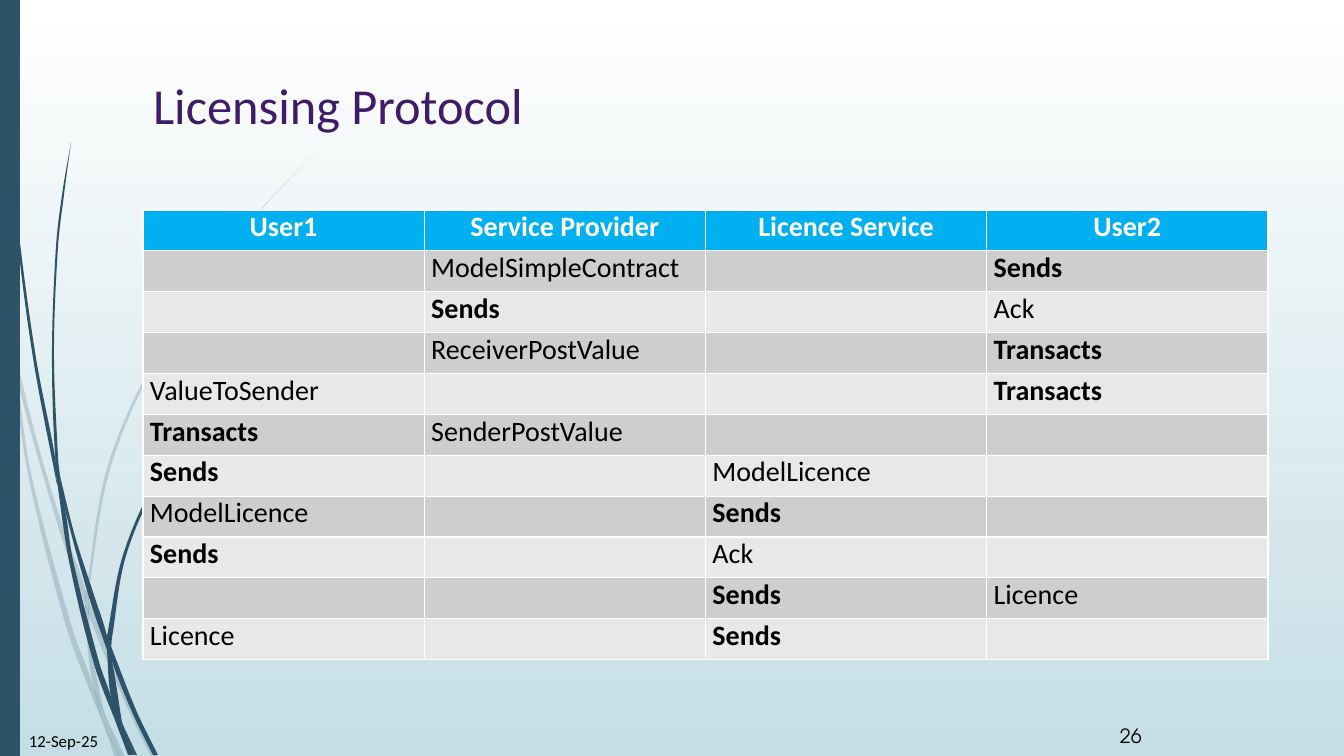
from math import dist

from lxml import etree
from pptx import Presentation
from pptx import util as u
from pptx.dml.color import RGBColor
from pptx.enum import shapes, text
from pptx.oxml import ns

COLORS = {
    "white": "FFFFFF", "mist": "C5DEE5", "slate": "2E5369", "violet": "3F1C6A",
    "header": "00B0F0", "dark_band": "CECECE", "light_band": "E8E8E8", "black": "000000",
}
HEADERS = ["User1", "Service Provider", "Licence Service", "User2"]
STEPS = [
    ["", "ModelSimpleContract", "", "Sends"],
    ["", "Sends", "", "Ack"],
    ["", "ReceiverPostValue", "", "Transacts"],
    ["ValueToSender", "", "", "Transacts"],
    ["Transacts", "SenderPostValue", "", ""],
    ["Sends", "", "ModelLicence", ""],
    ["ModelLicence", "", "Sends", ""],
    ["Sends", "", "Ack", ""],
    ["", "", "Sends", "Licence"],
    ["Licence", "", "Sends", ""],
]
ACTIONS = {"Sends", "Transacts"}
TITLE = ("Licensing Protocol", (143, 69, 1125, 141),
         {"name": "Calibri", "size": u.Pt(36), "color": "violet"})
FOOTERS = [
    ("12-Sep-25", (19, 726, 110, 40), text.MSO_ANCHOR.TOP,
     {"name": "Calibri", "size": u.Pt(12), "color": "black"}),
    ("26", (1110, 719, 61, 34), text.MSO_ANCHOR.MIDDLE,
     {"name": "TeX Gyre Adventor", "size": u.Pt(14), "color": "black"}),
]
TABLE_BOX = (143, 210, 1125, 450)
BAR_BOX = (0, 0, 20, 756)

PALE_BLADES = [
    ([(0, 284), (9, 325), (11, 353)], [(0, 301), (10, 347), (11, 353)]),
    ([(14, 348), (17, 379), (58, 526), (85, 604)],
     [(14, 348), (36, 437), (62, 524), (86, 591), (85, 604)]),
    ([(89, 601), (89, 615), (124, 700), (151, 757)],
     [(89, 601), (93, 612), (128, 698), (156, 757)]),
    ([(106, 717), (120, 757)], [(106, 717), (125, 757)]),
    ([(11, 353), (28, 474), (66, 626), (93, 699), (102, 720)],
     [(11, 353), (17, 379), (31, 473), (71, 624), (94, 688), (102, 720)]),
    ([(85, 604), (88, 651), (94, 688), (106, 717)],
     [(85, 604), (89, 613), (92, 651), (104, 712), (106, 717)]),
    ([(86, 591), (108, 465), (159, 351), (230, 246), (270, 199), (314, 154)],
     [(86, 591), (89, 601), (89, 589), (111, 466), (161, 352), (231, 247),
      (270, 200), (314, 154)]),
    ([(102, 720), (115, 757)], [(102, 720), (120, 757)]),
    ([(86, 591), (85, 604), (89, 615)], [(86, 591), (89, 601), (89, 615)]),
    ([(94, 688), (102, 720), (120, 757)], [(94, 688), (106, 717), (120, 757)]),
]
DARK_BLADES = [
    ([(3, 0), (7, 111), (17, 235), (33, 358), (57, 485)],
     [(4, 0), (8, 110), (19, 234), (36, 358), (55, 457), (57, 485)]),
    ([(60, 476), (65, 509), (89, 597), (107, 650)],
     [(60, 476), (75, 536), (94, 595), (107, 636), (107, 650)]),
    ([(111, 646), (112, 661), (133, 714), (153, 755)],
     [(111, 646), (114, 654), (137, 712), (158, 755)]),
    ([(57, 481), (69, 561), (94, 664), (118, 728)],
     [(57, 481), (65, 509), (73, 560), (99, 662), (111, 697), (118, 728)]),
    ([(71, 142), (62, 195), (56, 247), (52, 352), (55, 453), (60, 476)],
     [(71, 142), (64, 195), (58, 247), (54, 352), (58, 457), (60, 476)]),
    ([(123, 725), (134, 755)], [(123, 725), (137, 755)]),
    ([(55, 453), (57, 481), (65, 509)], [(55, 453), (60, 476), (65, 509)]),
    ([(107, 636), (123, 555), (157, 478), (206, 408), (262, 347)],
     [(107, 636), (111, 646), (112, 638), (126, 556), (159, 480), (207, 409),
      (263, 347)]),
    ([(118, 728), (128, 755)], [(118, 728), (132, 755)]),
    ([(107, 650), (111, 697), (123, 725)],
     [(107, 650), (112, 661), (122, 722), (123, 725)]),
    ([(107, 636), (107, 650), (112, 661)], [(107, 636), (111, 646), (112, 661)]),
    ([(111, 697), (118, 728), (131, 755)], [(111, 697), (123, 725), (134, 755)]),
]


def px(length):
    return round(length * 914400 / 100.8)


def rgb(name):
    return RGBColor.from_string(COLORS[name])


def style_font(font, formats):
    for key, value in formats.items():
        if key == "color":
            font.color.rgb = rgb(value)
        else:
            setattr(font, key, value)


def paint(shape, color, alpha=100):
    shape.shadow.inherit = False
    shape.fill.solid()
    shape.fill.fore_color.rgb = rgb(color)
    shape.line.fill.background()
    if alpha < 100:
        tone = shape.fill._xPr.find(".//" + ns.qn("a:srgbClr"))
        etree.SubElement(tone, ns.qn("a:alpha"), val=str(alpha * 1000))


def curve(knots):
    slopes = []
    for i in range(len(knots)):
        near = knots[max(i - 1, 0):i + 2]
        span = sum(dist(a, b) for a, b in zip(near, near[1:]))
        slopes.append([(near[-1][k] - near[0][k]) / span for k in (0, 1)])
    segments = []
    for i in range(len(knots) - 1):
        reach = dist(knots[i], knots[i + 1]) / 3
        leave = [knots[i][k] + reach * slopes[i][k] for k in (0, 1)]
        arrive = [knots[i + 1][k] - reach * slopes[i + 1][k] for k in (0, 1)]
        segments.append((knots[i + 1], (leave, arrive)))
    return segments


def add_blade(page, edges, alpha):
    left, right = edges
    join = [] if left[-1] == right[-1] else [(right[-1], ())]
    segments = curve(left) + join + curve(right[::-1])
    builder = page.shapes.build_freeform(*map(px, left[0]), scale=1.0)
    builder.add_line_segments([tuple(map(px, end)) for end, _ in segments], close=True)
    blade = builder.convert_to_shape()
    lines = list(blade._element.iter(ns.qn("a:lnTo")))
    for line, (_, handles) in zip(lines, segments):
        if handles:
            line.tag = ns.qn("a:cubicBezTo")
        for place, (x, y) in enumerate(handles):
            line.insert(place, etree.Element(
                ns.qn("a:pt"), x=str(px(x) - blade.left), y=str(px(y) - blade.top)))
    paint(blade, "slate", alpha)


def add_protocol(page):
    rows = [HEADERS] + STEPS
    table = page.shapes.add_table(len(rows), len(HEADERS), *map(px, TABLE_BOX)).table
    for r, row in enumerate(rows):
        header = r == 0
        band = "header" if header else ("light_band", "dark_band")[r % 2]
        for c, words in enumerate(row):
            cell = table.cell(r, c)
            margins = {"margin_left": px(7), "margin_right": px(7),
                       "margin_top": 0, "margin_bottom": 0}
            for key, value in margins.items():
                setattr(cell, key, value)
            cell.fill.solid()
            cell.fill.fore_color.rgb = rgb(band)
            if words:
                cell.text = words
                para = cell.text_frame.paragraphs[0]
                para.alignment = text.PP_ALIGN.CENTER if header else text.PP_ALIGN.LEFT
                style_font(para.runs[0].font, {
                    "name": "Calibri", "size": u.Pt(20),
                    "bold": header or words in ACTIONS,
                    "color": "white" if header else "black"})


def write(box, words, anchor, formats):
    frame = box.text_frame
    frame.text = words
    frame.word_wrap = True
    frame.auto_size = text.MSO_AUTO_SIZE.NONE
    frame.vertical_anchor = anchor
    para = frame.paragraphs[0]
    para.alignment = text.PP_ALIGN.LEFT
    style_font(para.runs[0].font, formats)


def main():
    deck = Presentation()
    deck.slide_width, deck.slide_height = px(1344), px(756)
    page = deck.slides.add_slide(deck.slide_layouts[5])

    backdrop = page.background.fill
    backdrop.gradient()
    backdrop.gradient_angle = 270
    for stop, color in zip(backdrop.gradient_stops, ("white", "mist")):
        stop.color.rgb = rgb(color)

    for blades, alpha in ((PALE_BLADES, 20), (DARK_BLADES, 100)):
        for edges in blades:
            add_blade(page, edges, alpha)
    paint(page.shapes.add_shape(shapes.MSO_SHAPE.RECTANGLE, *map(px, BAR_BOX)), "slate")

    words, place, formats = TITLE
    title = page.shapes.title
    title.left, title.top, title.width, title.height = map(px, place)
    write(title, words, text.MSO_ANCHOR.TOP, formats)
    add_protocol(page)
    for words, place, anchor, formats in FOOTERS:
        write(page.shapes.add_textbox(*map(px, place)), words, anchor, formats)
    deck.save("out.pptx")


if __name__ == "__main__":
    main()
